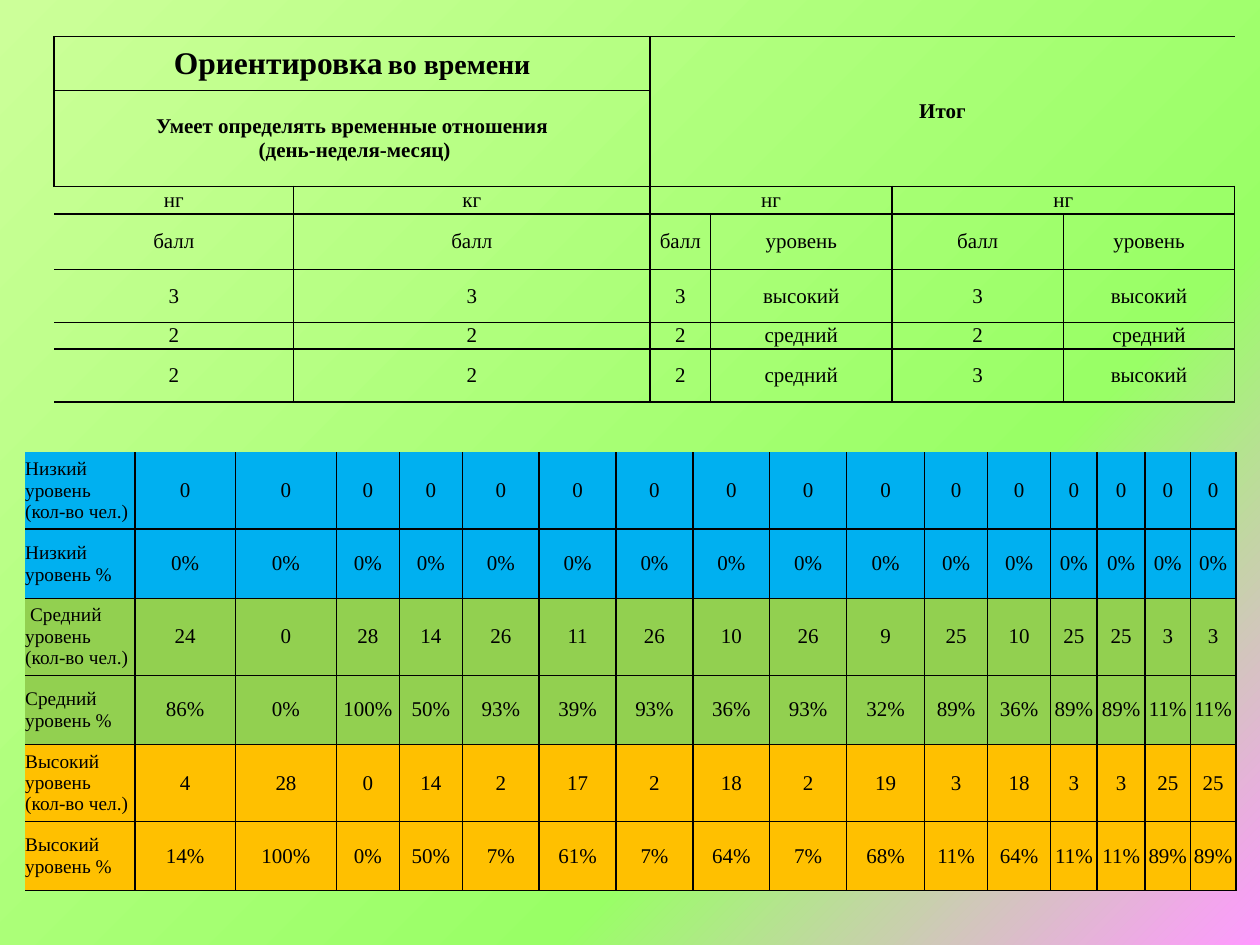
from dataclasses import dataclass, field
from typing import Optional

from lxml.etree import SubElement
from pptx import Presentation
from pptx.dml.color import RGBColor
from pptx.enum.text import MSO_ANCHOR, PP_ALIGN
from pptx.oxml import parse_xml
from pptx.oxml.ns import nsdecls, qn
from pptx.util import Inches, Pt

SLIDE_WIDTH, SLIDE_HEIGHT = Inches(10), Inches(7.5)
FONT = "Times New Roman"
COLORS = {
    "ink": "000000",
    "low": "00B0F0",
    "middle": "92D050",
    "high": "FFC000",
    "corner": "FF99FF",
    "meadow": "99FF66",
    "lime": "CCFF99",
}
BACKDROP_STOPS = [(0, "corner"), (32, "meadow"), (100, "lime")]
NO_STYLE = "{2D5ABB26-0587-4C30-8999-92F81FD0307C}"
CHILDREN = 28


@dataclass
class Grid:
    left: float
    top: float
    width: float
    height: float
    columns: list[float]
    rows: list[float]


@dataclass
class Entry:
    row: int
    column: int
    paragraphs: list[list[tuple[str, float]]]
    row_span: int = 1
    column_span: int = 1
    bold: bool = False
    align: Optional[PP_ALIGN] = PP_ALIGN.CENTER
    fill: Optional[str] = None
    borders: dict[str, float] = field(default_factory=lambda: dict.fromkeys("LRTB", 1))


def sides(names: str, **widths: float) -> dict[str, float]:
    return dict.fromkeys(names, 1) | widths


def draw_backdrop(slide) -> None:
    stops = "".join(
        f'<a:gs pos="{share * 1000}"><a:srgbClr val="{COLORS[name]}"/></a:gs>'
        for share, name in BACKDROP_STOPS
    )
    slide.element.cSld.insert(0, parse_xml(
        f'<p:bg {nsdecls("p", "a")}><p:bgPr><a:gradFill rotWithShape="0">'
        f'<a:gsLst>{stops}</a:gsLst><a:path path="circle">'
        '<a:fillToRect l="100000" t="100000"/></a:path></a:gradFill>'
        '<a:effectLst/></p:bgPr></p:bg>'
    ))


def draw_borders(cell, borders: dict[str, float]) -> None:
    properties = cell._tc.get_or_add_tcPr()
    for side in "LRTB":
        border = SubElement(properties, qn(f"a:ln{side}"))
        if side in borders:
            border.set("w", str(Pt(borders[side])))
            paint = SubElement(border, qn("a:solidFill"))
            SubElement(paint, qn("a:srgbClr")).set("val", COLORS["ink"])
        else:
            SubElement(border, qn("a:noFill"))


def draw_entry(table, entry: Entry) -> None:
    cell = table.cell(entry.row, entry.column)
    if entry.row_span * entry.column_span > 1:
        cell.merge(table.cell(entry.row + entry.row_span - 1,
                              entry.column + entry.column_span - 1))
    cell.margin_left = cell.margin_right = cell.margin_top = cell.margin_bottom = 0
    cell.vertical_anchor = MSO_ANCHOR.MIDDLE
    draw_borders(cell, entry.borders)
    if entry.fill:
        cell.fill.solid()
        cell.fill.fore_color.rgb = RGBColor.from_string(COLORS[entry.fill])
    else:
        cell.fill.background()
    frame = cell.text_frame
    for index, pieces in enumerate(entry.paragraphs):
        paragraph = frame.add_paragraph() if index else frame.paragraphs[0]
        paragraph.alignment = entry.align
        for text, size in pieces:
            run = paragraph.add_run()
            run.text = text
            run.font.name = FONT
            run.font.size = Pt(size)
            run.font.bold = entry.bold
            run.font.color.rgb = RGBColor.from_string(COLORS["ink"])


def draw_table(slide, grid: Grid, entries: list[Entry]) -> None:
    width, height = int(SLIDE_WIDTH * grid.width), int(SLIDE_HEIGHT * grid.height)
    frame = slide.shapes.add_table(
        len(grid.rows), len(grid.columns),
        int(SLIDE_WIDTH * grid.left), int(SLIDE_HEIGHT * grid.top), width, height,
    )
    table = frame.table
    table.first_row = table.horz_banding = False
    table._tbl.tblPr.find(qn("a:tableStyleId")).text = NO_STYLE
    for column, weight in zip(table.columns, grid.columns):
        column.width = int(width * weight / sum(grid.columns))
    for row, weight in zip(table.rows, grid.rows):
        row.height = int(height * weight / sum(grid.rows))
    for entry in entries:
        draw_entry(table, entry)


def time_entries() -> list[Entry]:
    entries = [
        Entry(0, 0, [[("Ориентировка", 18), (" ", 12), ("во времени", 16)]],
              column_span=2, bold=True, borders=sides("LRT", B=0.5)),
        Entry(0, 2, [[("Итог", 12)]], row_span=2, column_span=4, bold=True,
              borders=sides("LTB")),
        Entry(1, 0, [[("Умеет определять временные отношения", 12)],
                     [(" (день-неделя-месяц)", 12)]],
              column_span=2, bold=True, borders=sides("LRB", T=0.5)),
    ]
    periods = [(0, 1, "нг"), (1, 1, "кг"), (2, 2, "нг"), (4, 2, "нг")]
    score_rows = [
        ["балл", "балл", "балл", "уровень", "балл", "уровень"],
        ["3", "3", "3", "высокий", "3", "высокий"],
        ["2", "2", "2", "средний", "2", "средний"],
        ["2", "2", "2", "средний", "3", "высокий"],
    ]
    body = [(2, column, span, text) for column, span, text in periods]
    body += [(row, column, 1, text)
             for row, scores in enumerate(score_rows, 3)
             for column, text in enumerate(scores)]
    for row, column, span, text in body:
        entries.append(Entry(row, column, [[(text, 12)]], column_span=span,
                             borders=sides("LRTB" if column else "RTB")))
    return entries


def level_entries() -> list[Entry]:
    middle = [24, 0, 28, 14, 26, 11, 26, 10, 26, 9, 25, 10, 25, 25, 3, 3]
    levels = [
        ("Низкий", "", "low", [0] * len(middle)),
        ("Средний", " ", "middle", middle),
        ("Высокий", "", "high", [CHILDREN - count for count in middle]),
    ]
    lines = []
    for name, lead, color, counts in levels:
        lines.append((f"{lead}{name} уровень (кол-во чел.)", color,
                      [str(count) for count in counts]))
        lines.append((f"{name} уровень %", color,
                      [f"{count / CHILDREN:.0%}" for count in counts]))
    entries = []
    for row, (label, color, values) in enumerate(lines):
        top = "T" if row else ""
        entries.append(Entry(row, 0, [[(label, 11)]], align=PP_ALIGN.LEFT,
                             fill=color, borders=sides("RB" + top)))
        for column, value in enumerate(values, 1):
            entries.append(Entry(row, column, [[(value, 12)]], fill=color,
                                 borders=sides("LRB" + top)))
    return entries


def main() -> None:
    deck = Presentation()
    deck.slide_width, deck.slide_height = SLIDE_WIDTH, SLIDE_HEIGHT
    slide = deck.slides.add_slide(deck.slide_layouts[6])
    draw_backdrop(slide)
    time_grid = Grid(0.043, 0.29 / 7.5, 0.937, 2.9 / 7.5,
                     [1.9, 2.83, 0.48, 1.44, 1.36, 1.36],
                     [0.43, 0.76, 0.22, 0.44, 0.42, 0.21, 0.42])
    level_grid = Grid(0.02, 3.59 / 7.5, 0.961, 3.48 / 7.5,
                      [0.87] + [0.8] * 2 + [0.5] * 2 + [0.61] * 5
                      + [0.62, 0.5, 0.5, 0.37, 0.38, 0.36, 0.36],
                      [0.61, 0.55] * 3)
    draw_table(slide, time_grid, time_entries())
    draw_table(slide, level_grid, level_entries())
    deck.save("out.pptx")


if __name__ == "__main__":
    main()
